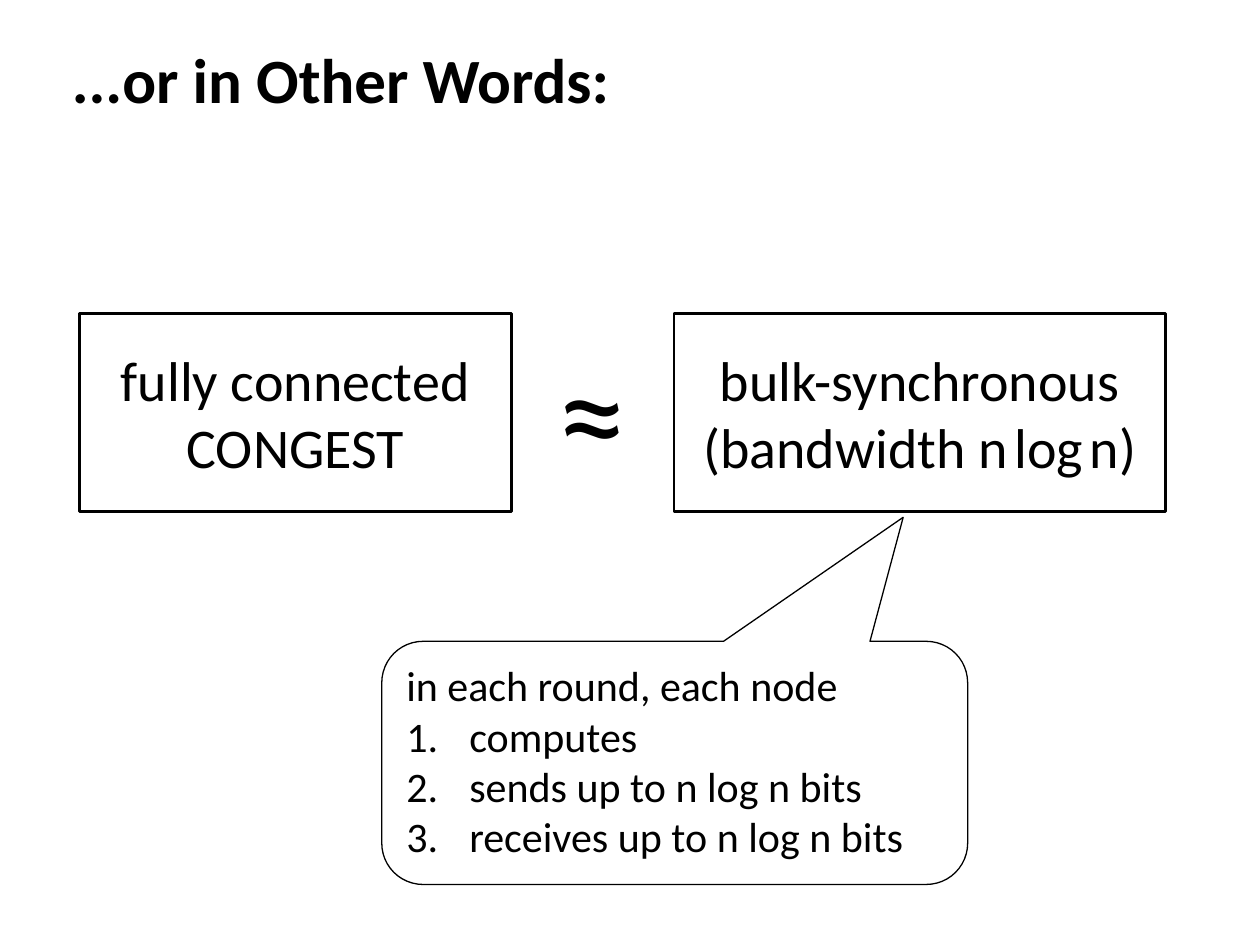
from dataclasses import dataclass
from typing import Any

from lxml import etree
from pptx import Presentation
from pptx import util as u
from pptx.dml.color import RGBColor
from pptx.enum import shapes, text
from pptx.oxml.ns import qn

WIDE, HIGH = u.Inches(10), u.Inches(7.5)
INK = "000000"
LEFT, MID = text.PP_ALIGN.LEFT, text.PP_ALIGN.CENTER
KIND = shapes.MSO_SHAPE


@dataclass
class Area:
    x: float
    y: float
    w: float
    h: float


@dataclass
class Line:
    runs: list[tuple[str, int]]
    align: Any = MID
    step: bool = False


@dataclass
class Box:
    area: Area
    lines: list[Line]
    kind: Any = KIND.RECTANGLE
    edge: float = 1.5
    anchor: Any = text.MSO_ANCHOR.MIDDLE
    adjust: tuple[float, ...] = ()


def color(code: str) -> RGBColor:
    return RGBColor.from_string(code)


def apply(item: Any, form: dict[str, Any]) -> None:
    for name, value in form.items():
        setattr(item, name, value)


def spots(area: Area) -> dict[str, int]:
    return {
        "left": int(WIDE * area.x / 100),
        "top": int(HIGH * area.y / 100),
        "width": int(WIDE * area.w / 100),
        "height": int(HIGH * area.h / 100),
    }


def number(para: Any) -> None:
    props = para._p.get_or_add_pPr()
    props.set("marL", str(u.Inches(0.5)))
    props.set("indent", str(-u.Inches(0.5)))
    etree.SubElement(props, qn("a:buFont"), typeface="+mj-lt")
    etree.SubElement(props, qn("a:buAutoNum"), type="arabicPeriod")


def write(frame: Any, lines: list[Line], anchor: Any, bold: bool = False) -> None:
    apply(frame, {"word_wrap": True, "vertical_anchor": anchor,
                  "auto_size": text.MSO_AUTO_SIZE.NONE})
    for pos, line in enumerate(lines):
        para = frame.add_paragraph() if pos else frame.paragraphs[0]
        para.alignment = line.align
        if line.step:
            number(para)
        for words, size in line.runs:
            run = para.add_run()
            run.text = words
            apply(run.font, {"name": "Calibri", "size": u.Pt(size), "bold": bold})
            run.font.color.rgb = color(INK)


def draw(slide: Any, box: Box) -> None:
    shape = slide.shapes.add_shape(box.kind, **spots(box.area))
    shape.shadow.inherit = False
    shape.fill.background()
    if box.edge:
        shape.line.color.rgb = color(INK)
        shape.line.width = u.Pt(box.edge)
    else:
        shape.line.fill.background()
    for pos, value in enumerate(box.adjust):
        shape.adjustments[pos] = value
    write(shape.text_frame, box.lines, box.anchor)


def label(slide: Any, area: Area, line: Line) -> None:
    note = slide.shapes.add_textbox(**spots(area))
    write(note.text_frame, [line], text.MSO_ANCHOR.MIDDLE)


def main() -> None:
    deck = Presentation()
    apply(deck, {"slide_width": WIDE, "slide_height": HIGH})
    slide = deck.slides.add_slide(deck.slide_layouts[5])

    title = slide.shapes.title
    apply(title, spots(Area(4.7, 3.33, 91.9, 10)))
    head = Line([("...or in Other Words:", 36)], LEFT)
    write(title.text_frame, [head], text.MSO_ANCHOR.MIDDLE, bold=True)

    top, tall = 33.2, 20.93
    draw(slide, Box(Area(6.3, top, 34.3, tall), [
        Line([("fully connected", 32)]),
        Line([("CONGEST", 32)]),
    ]))
    draw(slide, Box(Area(53.5, top, 39, tall), [
        Line([("bulk-synchronous", 32)]),
        Line([("(bandwidth n", 32), (" ", 16), ("log", 32), (" ", 16), ("n)", 32)]),
    ]))
    label(slide, Area(39, 34.27, 16.1, 17.87), Line([("≈", 80)]))

    steps = ["computes", "sends up to n log n bits", "receives up to n log n bits"]
    draw(slide, Box(
        Area(30.3, 67.87, 46.5, 25.73),
        [Line([("in each round, each node", 24)], LEFT)]
        + [Line([(step, 24)], LEFT, True) for step in steps],
        KIND.ROUNDED_RECTANGULAR_CALLOUT, 0.75, text.MSO_ANCHOR.TOP,
        (0.39, -1.01, 0.17),
    ))
    deck.save("out.pptx")


if __name__ == "__main__":
    main()
